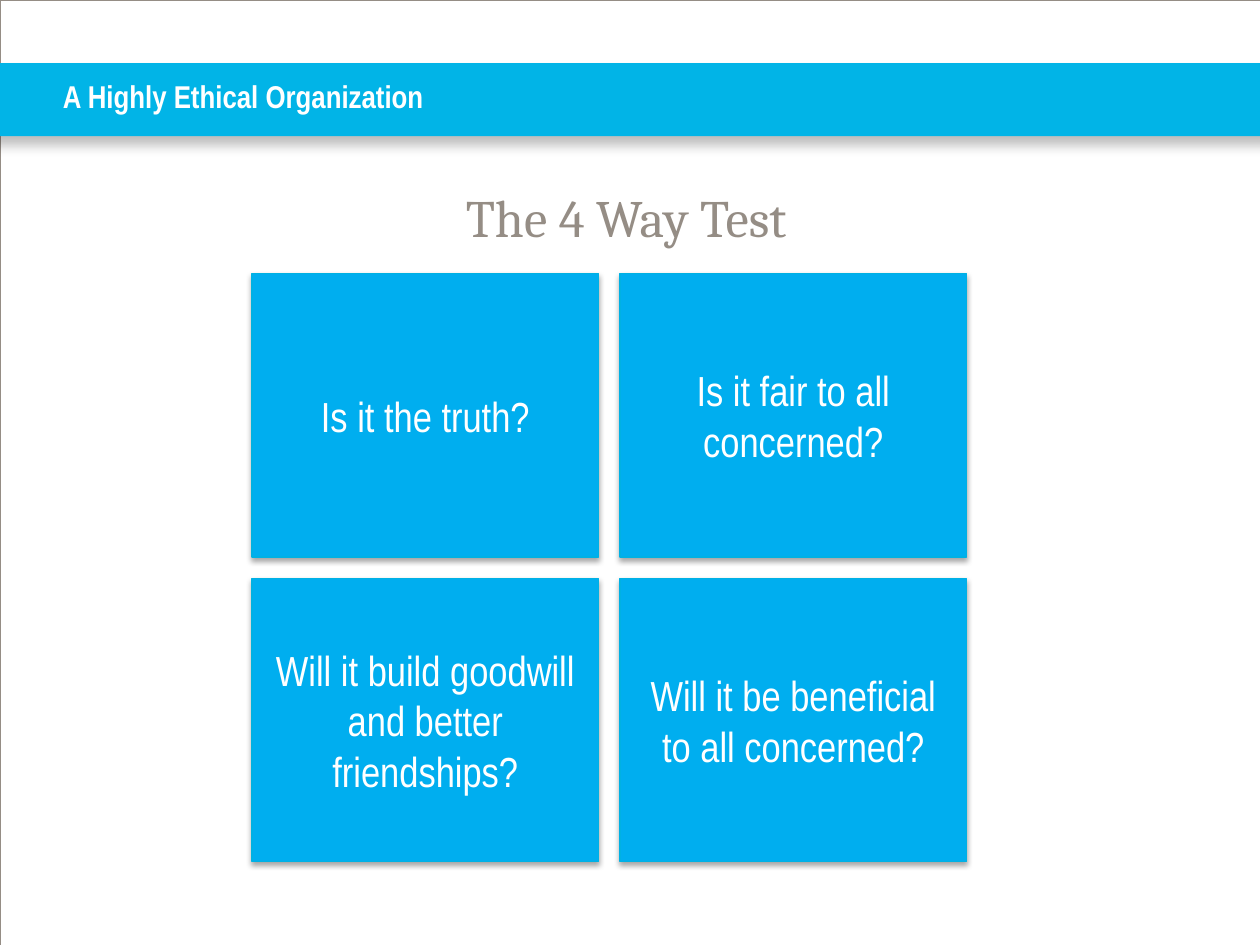
from lxml import etree
from pptx import Presentation
from pptx.dml.color import RGBColor
from pptx.enum.shapes import MSO_SHAPE
from pptx.enum.text import MSO_ANCHOR, PP_ALIGN
from pptx.oxml.ns import qn
from pptx.util import Inches, Pt

RECTANGLE = MSO_SHAPE.RECTANGLE
MIDDLE, TOP = MSO_ANCHOR.MIDDLE, MSO_ANCHOR.TOP
LEFT, CENTER = PP_ALIGN.LEFT, PP_ALIGN.CENTER

WHITE = RGBColor(0xFF, 0xFF, 0xFF)
TAUPE = RGBColor(0x95, 0x8D, 0x85)
BAND_BLUE = RGBColor(0x01, 0xB4, 0xE7)
TILE_BLUE = RGBColor(0x00, 0xAE, 0xEF)
EDGE_BLUE = RGBColor(0x00, 0xB1, 0xE3)


class SlideBuilder:
    """Holds the style and the current page."""

    body_font = "Arial Narrow"
    heading_font = "Cambria"

    def __init__(self, page):
        self.page = page

    def rectangle(self, left, top, width, height, fill=None, line=None, line_width=0.75):
        shape = self.page.shapes.add_shape(
            RECTANGLE, Inches(left), Inches(top), Inches(width), Inches(height))
        shape.shadow.inherit = False
        if fill is None:
            shape.fill.background()
        else:
            shape.fill.solid()
            shape.fill.fore_color.rgb = fill
        if line is None:
            shape.line.fill.background()
        else:
            shape.line.color.rgb = line
            shape.line.width = Pt(line_width)
        return shape

    def drop_shadow(self, shape, opacity, blur, distance):
        effects = shape._element.spPr.find(qn("a:effectLst"))
        shadow = etree.SubElement(
            effects, qn("a:outerShdw"), blurRad=str(Pt(blur)), dist=str(Pt(distance)),
            dir="5400000", algn="t", rotWithShape="0")
        color = etree.SubElement(shadow, qn("a:srgbClr"), val="000000")
        etree.SubElement(color, qn("a:alpha"), val=str(opacity * 1000))

    def set_text(self, shape, text, size, font, color, align=CENTER, anchor=MIDDLE, bold=False):
        frame = shape.text_frame
        frame.text = text
        frame.word_wrap = True
        frame.vertical_anchor = anchor
        paragraph = frame.paragraphs[0]
        paragraph.alignment = align
        style = paragraph.runs[0].font
        style.name, style.size, style.bold = font, Pt(size), bold
        style.color.rgb = color

    def text(self, left, top, width, height, text, size, font, color, inset=None, **layout):
        box = self.page.shapes.add_textbox(
            Inches(left), Inches(top), Inches(width), Inches(height))
        self.set_text(box, text, size, font, color, **layout)
        if inset is not None:
            frame = box.text_frame
            frame.margin_left = frame.margin_right = Inches(inset)
            frame.margin_top = frame.margin_bottom = Inches(inset)

    def tile(self, left, top, width, height, text):
        shape = self.rectangle(left, top, width, height, TILE_BLUE, EDGE_BLUE)
        self.drop_shadow(shape, opacity=35, blur=3.1, distance=1.8)
        self.set_text(shape, text, 24, self.body_font, WHITE)


def main():
    deck = Presentation()
    deck.slide_width, deck.slide_height = Inches(10), Inches(7.5)
    builder = SlideBuilder(deck.slides.add_slide(deck.slide_layouts[6]))

    # Page frame and title band
    builder.rectangle(0, 0, 10, 7.5, line=TAUPE, line_width=0.13)
    band = builder.rectangle(-0.08, 0.5, 10.17, 0.58, fill=BAND_BLUE)
    builder.drop_shadow(band, opacity=25, blur=7, distance=4.8)
    builder.text(0.5, 0.5, 6.67, 0.53, "A Highly Ethical Organization", 18,
                 builder.body_font, WHITE, inset=0, align=LEFT, bold=True)

    # Heading
    builder.text(0.47, 1.42, 9, 5.79, "The 4 Way Test", 30,
                 builder.heading_font, TAUPE, anchor=TOP)

    # Two by two grid of questions
    questions = [
        "Is it the truth?",
        "Is it fair to all concerned?",
        "Will it build goodwill and better friendships?",
        "Will it be beneficial to all concerned?",
    ]
    width, height, gap = 2.75, 2.25, 0.17
    for index, question in enumerate(questions):
        row, column = divmod(index, 2)
        builder.tile(2 + column * (width + gap), 2.17 + row * (height + gap),
                     width, height, question)

    deck.save("out.pptx")


if __name__ == "__main__":
    main()
